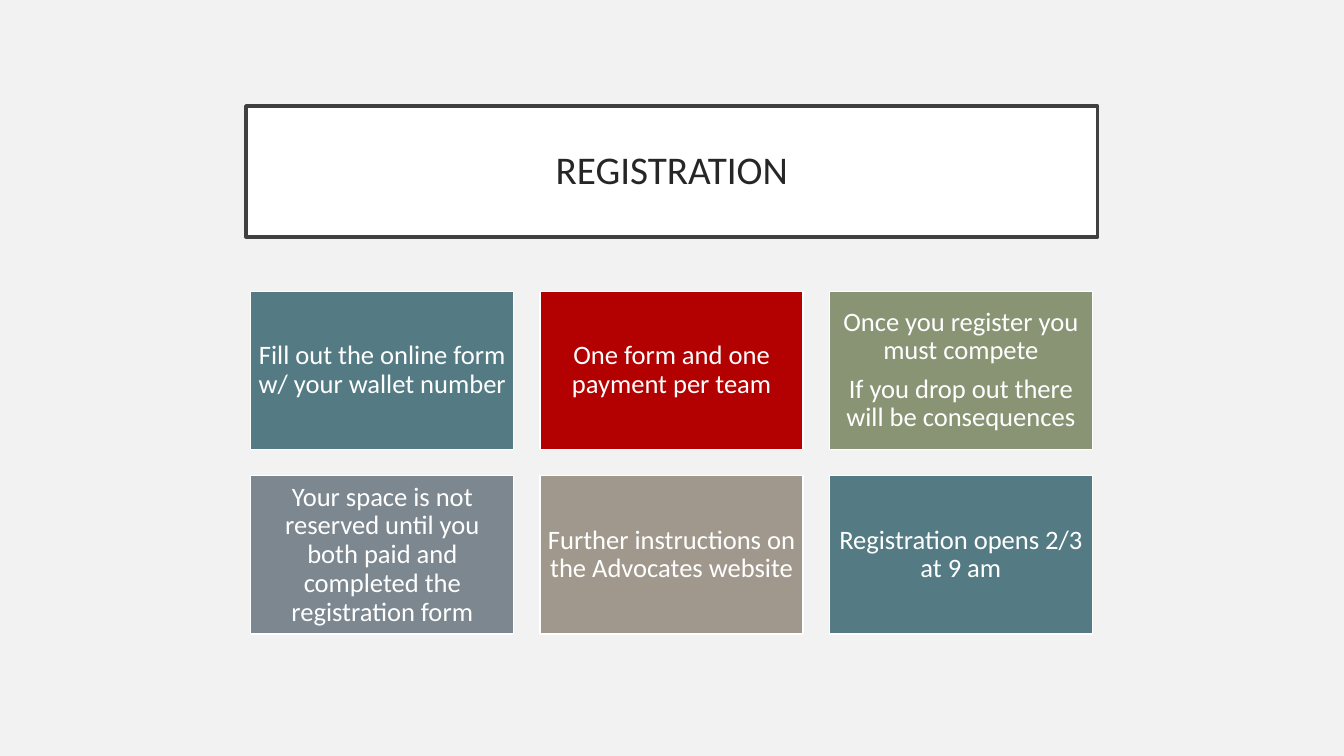
from pptx import Presentation
from pptx.dml.color import RGBColor
from pptx.enum.shapes import MSO_SHAPE
from pptx.enum.text import MSO_ANCHOR, MSO_AUTO_SIZE, PP_ALIGN
from pptx.util import Cm, Pt

WHITE = RGBColor(0xFF, 0xFF, 0xFF)
PALE = RGBColor(0xF2, 0xF2, 0xF2)
CHARCOAL = RGBColor(0x40, 0x40, 0x40)
INK = RGBColor(0x26, 0x26, 0x26)
TEAL = RGBColor(0x54, 0x7B, 0x84)
RED = RGBColor(0xB3, 0x00, 0x00)
OLIVE = RGBColor(0x88, 0x94, 0x74)
SLATE = RGBColor(0x7C, 0x87, 0x8F)
TAUPE = RGBColor(0xA0, 0x98, 0x8C)

COLUMNS = 3
CARD_LEFT, CARD_TOP = 6.32, 7.34
CARD_WIDTH, CARD_HEIGHT = 6.63, 3.99
CARD_GAP = 0.66

CARDS = [
    (TEAL, ["Fill out the online form w/ your wallet number"]),
    (RED, ["One form and one payment per team"]),
    (OLIVE, ["Once you register you must compete",
             "If you drop out there will be consequences"]),
    (SLATE, ["Your space is not reserved until you both paid and "
             "completed the registration form"]),
    (TAUPE, ["Further instructions on the Advocates website"]),
    (TEAL, ["Registration opens 2/3 at 9 am"]),
]


class RegistrationPage:
    """Holds the shared style and the slide being built."""

    font_name = "Calibri"
    line_spacing = 0.9

    def __init__(self, deck):
        self.page = deck.slides.add_slide(deck.slide_layouts[5])
        self.page.background.fill.solid()
        self.page.background.fill.fore_color.rgb = PALE

    def paint(self, box, fill, outline, weight):
        """Fill and outline a box."""
        box.fill.solid()
        box.fill.fore_color.rgb = fill
        box.line.color.rgb = outline
        box.line.width = Pt(weight)

    def add_text(self, box, texts, size, color, inset):
        """Set centred paragraphs in a box."""
        frame = box.text_frame
        frame.word_wrap = True
        frame.auto_size = MSO_AUTO_SIZE.NONE
        frame.vertical_anchor = MSO_ANCHOR.MIDDLE
        frame.margin_left = frame.margin_right = Cm(inset)
        frame.margin_top = frame.margin_bottom = Cm(inset)
        for index, text in enumerate(texts):
            para = frame.add_paragraph() if index else frame.paragraphs[0]
            para.alignment = PP_ALIGN.CENTER
            para.line_spacing = self.line_spacing
            para.space_before = Pt(6.7 if index else 0)
            span = para.add_run()
            span.text = text
            span.font.name = self.font_name
            span.font.size = Pt(size)
            span.font.color.rgb = color

    def title(self, text):
        """Place the framed title."""
        box = self.page.shapes.title
        box.left, box.top = Cm(6.2), Cm(2.67)
        box.width, box.height = Cm(21.46), Cm(3.3)
        self.paint(box, WHITE, CHARCOAL, 2.5)
        self.add_text(box, [text], 28, INK, 0.51)

    def card(self, index, fill, texts):
        """Place one card in the grid."""
        row, column = divmod(index, COLUMNS)
        box = self.page.shapes.add_shape(
            MSO_SHAPE.RECTANGLE,
            Cm(CARD_LEFT + column * (CARD_WIDTH + CARD_GAP)),
            Cm(CARD_TOP + row * (CARD_HEIGHT + CARD_GAP)),
            Cm(CARD_WIDTH), Cm(CARD_HEIGHT))
        box.shadow.inherit = False
        self.paint(box, fill, WHITE, 1)
        self.add_text(box, texts, 19, WHITE, 0.2)


def main():
    """Build and save the deck."""
    deck = Presentation()
    deck.slide_width, deck.slide_height = Cm(33.87), Cm(19.05)
    registration = RegistrationPage(deck)
    registration.title("REGISTRATION")
    for index, (fill, texts) in enumerate(CARDS):
        registration.card(index, fill, texts)
    deck.save("out.pptx")


if __name__ == "__main__":
    main()
